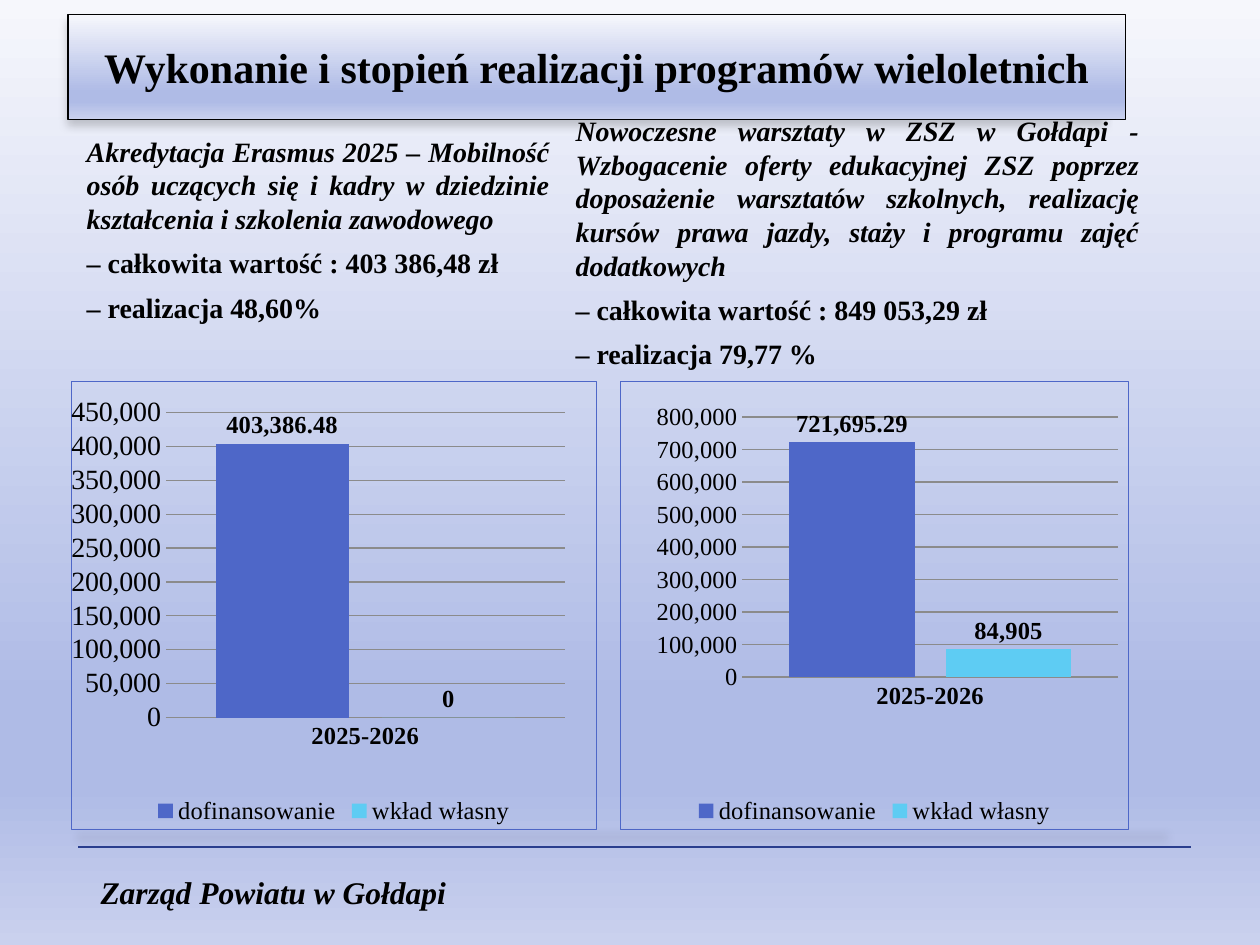
import copy

import pptx
import pptx.chart.data
import pptx.dml.color
import pptx.enum.chart
import pptx.enum.text
import pptx.oxml
import pptx.oxml.ns
import pptx.util

RGB = pptx.dml.color.RGBColor
Pt = pptx.util.Pt
qn = pptx.oxml.ns.qn
Align = pptx.enum.text.PP_ALIGN
Anchor = pptx.enum.text.MSO_ANCHOR
Fit = pptx.enum.text.MSO_AUTO_SIZE
Chart = pptx.enum.chart

BLACK = RGB(0x00, 0x00, 0x00)
BLUE = RGB(0x4E, 0x67, 0xC8)
CYAN = RGB(0x5E, 0xCC, 0xF3)
NAVY = RGB(0x2A, 0x3E, 0x8E)
GREY = RGB(0x8B, 0x8B, 0x8B)
FADE = [(0, RGB(0xF6, 0xF7, 0xFC)), (0.74, RGB(0xAF, 0xBB, 0xE6)),
        (0.83, RGB(0xAF, 0xBB, 0xE6)), (1, RGB(0xCA, 0xD1, 0xEE))]

SHADOW = """<a:effectLst %s><a:outerShdw blurRad="63500" dist="50800" dir="5400000"
 sx="98000" sy="98000" algn="ctr" rotWithShape="0"><a:srgbClr val="000000">
<a:alpha val="20000"/></a:srgbClr></a:outerShdw></a:effectLst>""" % pptx.oxml.ns.nsdecls("a")
FRAME = """<c:spPr %s><a:noFill/><a:ln w="9525"><a:solidFill><a:srgbClr val="%s"/>
</a:solidFill></a:ln></c:spPr>""" % (pptx.oxml.ns.nsdecls("c", "a"), BLUE)
LAYOUT = """<c:layout %s><c:manualLayout><c:layoutTarget val="inner"/>
<c:xMode val="edge"/><c:yMode val="edge"/><c:x val="%s"/><c:y val="%s"/>
<c:w val="%s"/><c:h val="%s"/></c:manualLayout></c:layout>"""


def format_font(font, size, bold=False, italic=False, color=BLACK):
    font.name = "Times New Roman"
    font.size = Pt(size)
    font.bold = bold
    font.italic = italic
    font.color.rgb = color


def write(para, text, align=Align.LEFT, before=0, after=0, **style):
    para.alignment = align
    para.space_before = Pt(before)
    para.space_after = Pt(after)
    span = para.add_run()
    span.text = text
    format_font(span.font, **style)


def fade(fill, element):
    """Give a fill the four-stop vertical gradient."""
    fill.gradient()
    fill.gradient_angle = 270
    stops = element.find(".//" + qn("a:gsLst"))
    stops.extend([copy.deepcopy(stop) for stop in stops])
    for stop, (position, color) in zip(fill.gradient_stops, FADE):
        stop.position = position
        stop.color.rgb = color


class Board:
    """Places elements on a grid of 100 columns and 75 rows."""

    def __init__(self, deck):
        self.column = deck.slide_width / 100
        self.row = deck.slide_height / 75
        self.page = deck.slides.add_slide(deck.slide_layouts[5])
        fade(self.page.background.fill, self.page.element)

    def cells(self, left, top, width, height):
        return (int(left * self.column), int(top * self.row),
                int(width * self.column), int(height * self.row))

    def title(self, text, *place):
        box = self.page.shapes.title
        box.left, box.top, box.width, box.height = self.cells(*place)
        fade(box.fill, box.element)
        box.line.color.rgb = BLACK
        box.line.width = Pt(0.75)
        box.element.spPr.append(pptx.oxml.parse_xml(SHADOW))
        box.text_frame.auto_size = Fit.SHAPE_TO_FIT_TEXT
        write(box.text_frame.paragraphs[0], text, align=Align.CENTER, size=24, bold=True)

    def text_box(self, *place, anchor=Anchor.TOP):
        box = self.page.shapes.add_textbox(*self.cells(*place))
        box.text_frame.word_wrap = True
        box.text_frame.vertical_anchor = anchor
        return box.text_frame

    def programme(self, name, facts, *place):
        frame = self.text_box(*place, anchor=Anchor.BOTTOM)
        write(frame.paragraphs[0], name, align=Align.JUSTIFY, after=3,
              size=16, bold=True, italic=True)
        for fact in facts:
            write(frame.add_paragraph(), fact, align=Align.JUSTIFY,
                  before=3.2, after=3, size=16, bold=True)

    def footer(self, text, *place):
        write(self.text_box(*place).paragraphs[0], text, size=18, bold=True, italic=True)

    def rule(self, left, right, row):
        x, y, width, _ = self.cells(left, row, right - left, 0)
        line = self.page.shapes.add_connector(
            pptx.enum.shapes.MSO_CONNECTOR.STRAIGHT, x, y, x + width, y)
        line.line.color.rgb = NAVY
        line.line.width = Pt(1.25)
        line.element.spPr.append(pptx.oxml.parse_xml(SHADOW))

    def column_chart(self, grant, own, *place, plot, top, step, scale_size):
        data = pptx.chart.data.CategoryChartData()
        data.categories = ["2025-2026"]
        data.add_series("dofinansowanie", [grant])
        data.add_series("wkład własny", [own])
        chart = self.page.shapes.add_chart(
            Chart.XL_CHART_TYPE.COLUMN_CLUSTERED, *self.cells(*place), data).chart
        chart.has_title = False
        format_font(chart.font, 14)
        chart.has_legend = True
        chart.legend.position = Chart.XL_LEGEND_POSITION.BOTTOM
        chart.legend.include_in_layout = False

        # Columns and their labels
        bars = chart.plots[0]
        bars.gap_width, bars.overlap = 75, -25
        bars.vary_by_categories = False
        for series, color, number in zip(bars.series, (BLUE, CYAN), ("#,##0.00", "#,##0")):
            series.format.fill.solid()
            series.format.fill.fore_color.rgb = color
            labels = series.data_labels
            labels.show_value = True
            labels.number_format = number
            labels.number_format_is_linked = False
            labels.position = Chart.XL_LABEL_POSITION.OUTSIDE_END
            format_font(labels.font, 14, bold=True)

        # Axes
        names, scale = chart.category_axis, chart.value_axis
        for axis in (names, scale):
            axis.major_tick_mark = axis.minor_tick_mark = Chart.XL_TICK_MARK.NONE
        format_font(names.tick_labels.font, 14, bold=True)
        format_font(scale.tick_labels.font, scale_size)
        scale.tick_labels.number_format = "#,##0"
        scale.tick_labels.number_format_is_linked = False
        scale.minimum_scale, scale.maximum_scale, scale.major_unit = 0, top, step
        scale.format.line.fill.background()
        for line in (names.format.line, scale.major_gridlines.format.line):
            line.color.rgb = GREY
            line.width = Pt(0.75)

        # Frame and plot position
        space = chart.element
        space.find(qn("c:chart")).addnext(pptx.oxml.parse_xml(FRAME))
        area = space.find(".//" + qn("c:plotArea"))
        for layout in area.findall(qn("c:layout")):
            area.remove(layout)
        area.insert(0, pptx.oxml.parse_xml(LAYOUT % (pptx.oxml.ns.nsdecls("c"), *plot)))


def main():
    deck = pptx.Presentation()
    deck.slide_width = pptx.util.Inches(10)
    deck.slide_height = pptx.util.Inches(7.5)
    board = Board(deck)

    board.title("Wykonanie i stopień realizacji programów wieloletnich", 5.4, 2.8, 83.9, 5)

    # Programme descriptions
    board.programme(
        "Akredytacja Erasmus 2025 – Mobilność osób uczących się i kadry w dziedzinie "
        "kształcenia i szkolenia zawodowego",
        ["– całkowita wartość : 403 386,48 zł", "– realizacja 48,60%"],
        5.9, 9.4, 38.7, 16.8)
    board.programme(
        "Nowoczesne warsztaty w ZSZ w Gołdapi - Wzbogacenie oferty edukacyjnej ZSZ poprzez "
        "doposażenie warsztatów szkolnych, realizację kursów prawa jazdy, staży i programu "
        "zajęć dodatkowych",
        ["– całkowita wartość : 849 053,29 zł", "– realizacja 79,77 %"],
        44.7, 9.1, 46.7, 20.8)

    # Funding charts
    board.column_chart(403386.48, 0, 5.6, 30.2, 41.8, 35.7, top=450000, step=50000,
                       scale_size=16, plot=(0.18, 0.07, 0.76, 0.68))
    board.column_chart(721695.29, 84905, 49.2, 30.2, 40.4, 35.7, top=800000, step=100000,
                       scale_size=14, plot=(0.24, 0.08, 0.74, 0.58))

    # Footer
    board.rule(6.2, 94.5, 67.2)
    board.footer("Zarząd Powiatu w Gołdapi", 7, 68.8, 40.6, 4)
    deck.save("out.pptx")


if __name__ == "__main__":
    main()
